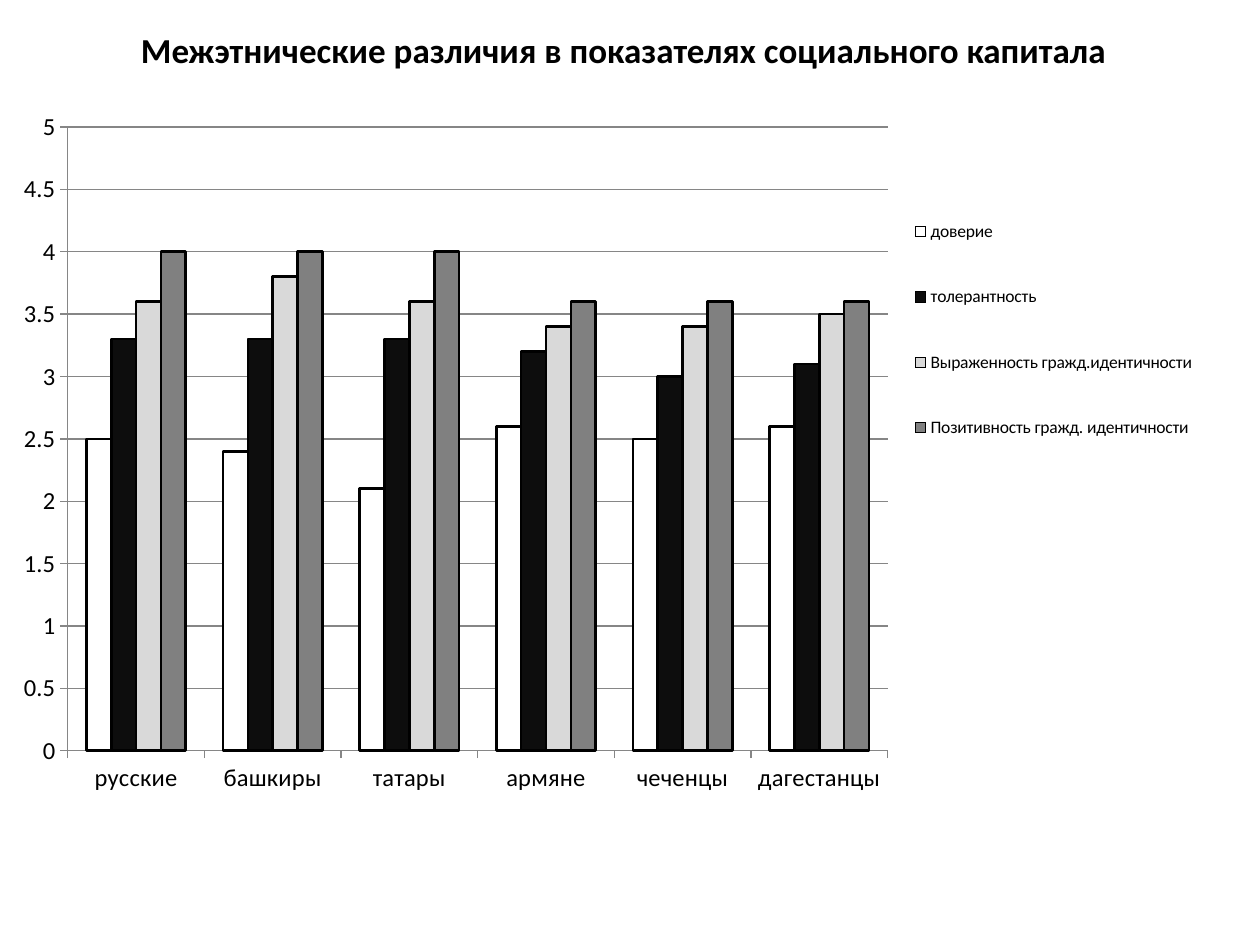
import dataclasses

import lxml.etree
import pptx
import pptx.chart.data
import pptx.dml.color
import pptx.enum.chart
import pptx.enum.text
import pptx.oxml.ns
import pptx.util

Pt = pptx.util.Pt
CATS = ["русские", "башкиры", "татары", "армяне", "чеченцы", "дагестанцы"]
ROWS = [
    ("доверие", "FFFFFF", (2.5, 2.4, 2.1, 2.6, 2.5, 2.6)),
    ("толерантность", "0D0D0D", (3.3, 3.3, 3.3, 3.2, 3, 3.1)),
    ("Выраженность гражд.идентичности", "D9D9D9", (3.6, 3.8, 3.6, 3.4, 3.4, 3.5)),
    ("Позитивность гражд. идентичности", "808080", (4, 4, 4, 3.6, 3.6, 3.6)),
]


@dataclasses.dataclass
class Theme:
    """Fonts, type sizes and colours of the slide."""

    face: str = "Calibri"
    ink: str = "000000"
    rule: str = "868686"
    head: int = 20
    label: int = 14
    key: int = 10


def color(code):
    """Turn a hex code into a colour."""
    return pptx.dml.color.RGBColor.from_string(code)


def arrange(node, index, box, inner=False):
    """Fix the place of a chart part as fractions of the chart."""
    qn = pptx.oxml.ns.qn
    for old in node.findall(qn("c:layout")):
        node.remove(old)
    layout = lxml.etree.Element(qn("c:layout"))
    manual = lxml.etree.SubElement(layout, qn("c:manualLayout"))
    pairs = [("layoutTarget", "inner")] if inner else []
    pairs += [("xMode", "edge"), ("yMode", "edge"), *zip("xywh", box)]
    for tag, val in pairs:
        lxml.etree.SubElement(manual, qn("c:" + tag)).set("val", str(val))
    node.insert(index, layout)


class Page:
    """Holds the style and the current slide."""

    def __init__(self, deck, theme):
        """Add a slide with a title."""
        self.theme = theme
        self.slide = deck.slides.add_slide(deck.slide_layouts[5])

    def font(self, font, size, bold=False):
        """Apply the theme to a font."""
        font.name, font.size, font.bold = self.theme.face, Pt(size), bold
        font.color.rgb = color(self.theme.ink)

    def title(self, text, left, top, width, height):
        """Place and fill the title."""
        shape = self.slide.shapes.title
        shape.left, shape.top = Pt(left), Pt(top)
        shape.width, shape.height = Pt(width), Pt(height)
        frame = shape.text_frame
        frame.word_wrap = True
        frame.auto_size = pptx.enum.text.MSO_AUTO_SIZE.NONE
        frame.vertical_anchor = pptx.enum.text.MSO_ANCHOR.MIDDLE
        para = frame.paragraphs[0]
        para.alignment = pptx.enum.text.PP_ALIGN.CENTER
        run = para.add_run()
        run.text = text
        self.font(run.font, self.theme.head, True)

    def line(self, form, code, width):
        """Style the line of a chart part."""
        form.line.color.rgb = color(code)
        form.line.width = Pt(width)

    def axis(self, axis):
        """Style an axis."""
        axis.major_tick_mark = pptx.enum.chart.XL_TICK_MARK.OUTSIDE
        self.font(axis.tick_labels.font, self.theme.label)
        self.line(axis.format, self.theme.rule, 0.75)

    def chart(self, cats, rows, left, top, width, height):
        """Draw a clustered column chart with a legend."""
        data = pptx.chart.data.CategoryChartData()
        data.categories = cats
        for name, _, vals in rows:
            data.add_series(name, vals)
        kind = pptx.enum.chart.XL_CHART_TYPE.COLUMN_CLUSTERED
        chart = self.slide.shapes.add_chart(
            kind, Pt(left), Pt(top), Pt(width), Pt(height), data).chart
        chart.has_title = False
        self.font(chart.font, self.theme.key)
        plot = chart.plots[0]
        plot.gap_width, plot.overlap = 150, 0
        plot.vary_by_categories = False
        for series, (_, fill, _) in zip(plot.series, rows):
            series.format.fill.solid()
            series.format.fill.fore_color.rgb = color(fill)
            self.line(series.format, self.theme.ink, 1.5)
        self.axis(chart.category_axis)
        scale = chart.value_axis
        self.axis(scale)
        scale.minimum_scale, scale.maximum_scale, scale.major_unit = 0, 5, 0.5
        scale.has_major_gridlines = True
        self.line(scale.major_gridlines.format, self.theme.rule, 0.75)
        chart.has_legend = True
        legend = chart.legend
        legend.position = pptx.enum.chart.XL_LEGEND_POSITION.RIGHT
        legend.include_in_layout = False
        self.font(legend.font, self.theme.key)
        area = chart._chartSpace.find(".//" + pptx.oxml.ns.qn("c:plotArea"))
        arrange(area, 0, (0.056, 0.041, 0.677, 0.879), True)
        arrange(legend._element, 1, (0.745, 0.11, 0.25, 0.433))


def main():
    """Build and save the slide."""
    deck = pptx.Presentation()
    deck.slide_width, deck.slide_height = Pt(720), Pt(540)
    page = Page(deck, Theme())
    page.title("Межэтнические различия в показателях социального капитала",
               50.4, 11.5, 612, 34)
    page.chart(CATS, ROWS, 0, 56, 692, 405.5)
    deck.save("out.pptx")


if __name__ == "__main__":
    main()
